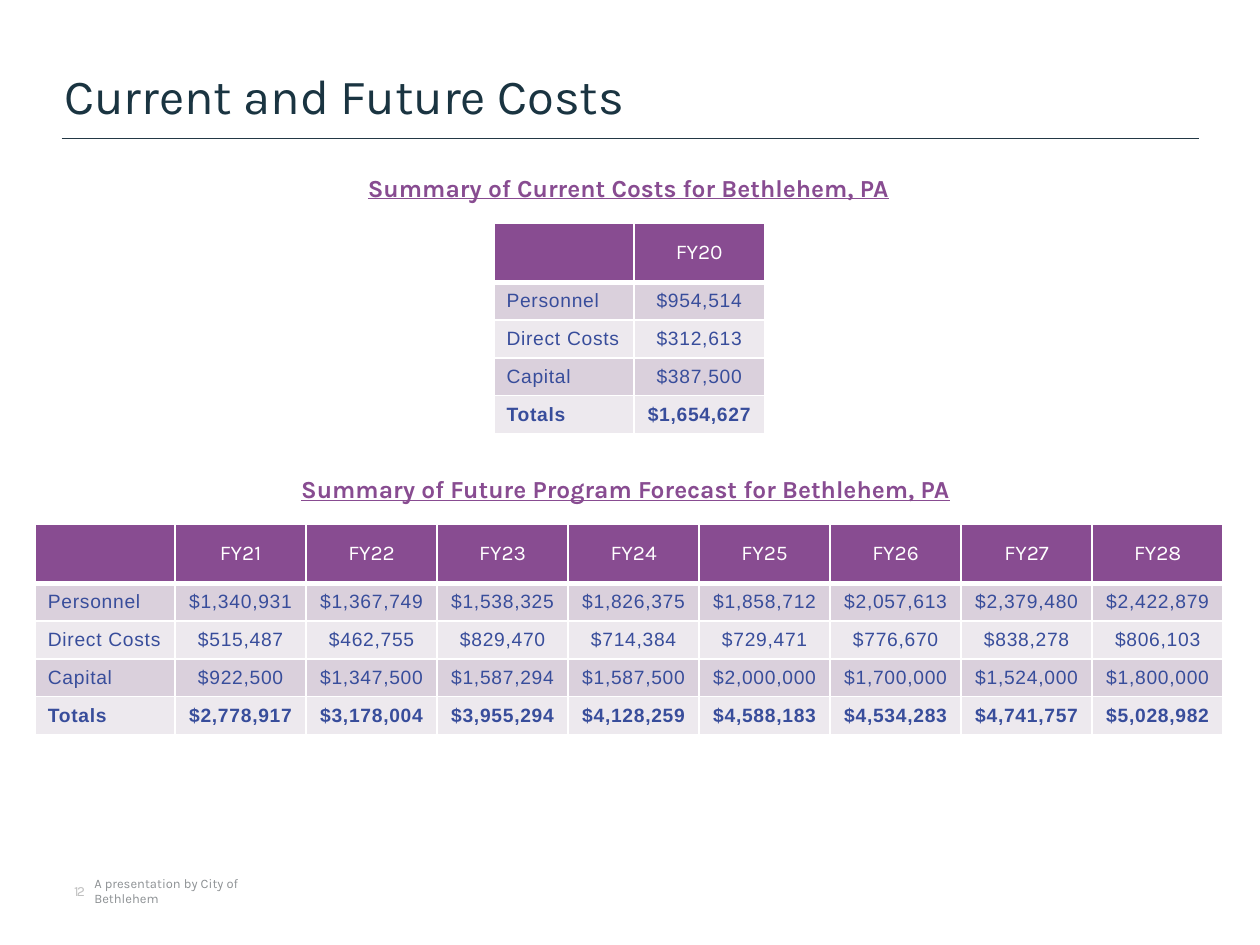
from lxml import etree
from pptx import Presentation
from pptx.dml.color import RGBColor
from pptx.enum.shapes import MSO_CONNECTOR
from pptx.enum.text import MSO_ANCHOR, PP_ALIGN
from pptx.oxml.ns import qn
from pptx.util import Inches, Pt

STRAIGHT = MSO_CONNECTOR.STRAIGHT
TOP, MIDDLE, BOTTOM = MSO_ANCHOR.TOP, MSO_ANCHOR.MIDDLE, MSO_ANCHOR.BOTTOM
LEFT, CENTER = PP_ALIGN.LEFT, PP_ALIGN.CENTER

COLORS = {
    "navy": "1A3441", "rule": "233845", "purple": "884C91", "blue": "384D9B",
    "dark band": "DAD0DC", "light band": "EDE9EE", "white": "FFFFFF",
    "footer": "8D9194", "page number": "BFBFBF",
}

CURRENT_COSTS = [
    ["", "FY20"],
    ["Personnel", "$954,514"],
    ["Direct Costs", "$312,613"],
    ["Capital", "$387,500"],
    ["Totals", "$1,654,627"],
]
FUTURE_COSTS = [
    ["", "FY21", "FY22", "FY23", "FY24", "FY25", "FY26", "FY27", "FY28"],
    ["Personnel", "$1,340,931", "$1,367,749", "$1,538,325", "$1,826,375",
     "$1,858,712", "$2,057,613", "$2,379,480", "$2,422,879"],
    ["Direct Costs", "$515,487", "$462,755", "$829,470", "$714,384",
     "$729,471", "$776,670", "$838,278", "$806,103"],
    ["Capital", "$922,500", "$1,347,500", "$1,587,294", "$1,587,500",
     "$2,000,000", "$1,700,000", "$1,524,000", "$1,800,000"],
    ["Totals", "$2,778,917", "$3,178,004", "$3,955,294", "$4,128,259",
     "$4,588,183", "$4,534,283", "$4,741,757", "$5,028,982"],
]
TABLES = [(3.92, 1.77, CURRENT_COSTS), (0.28, 4.16, FUTURE_COSTS)]
LABEL_WIDTH, YEAR_WIDTH = 1.11, 1.04
HEADER_HEIGHT, ROW_HEIGHT = 0.47, 0.3

HEADING = {"size": 14, "color": "purple", "bold": True, "underline": True}
TEXTS = [
    ("Current and Future Costs", (0.51, 0.32, 8.98, 0.67), 0, BOTTOM,
     {"size": 28, "color": "navy"}),
    ("Summary of Current Costs for Bethlehem, PA", (2.92, 1.37, 4.16, 0.4),
     0, TOP, HEADING),
    ("Summary of Future Program Forecast for Bethlehem, PA",
     (2.39, 3.76, 5.22, 0.4), 0, TOP, HEADING),
    ("A presentation by City of Bethlehem", (0.65, 6.93, 1.87, 0.28),
     0.1, MIDDLE, {"size": 7.4, "color": "footer", "after": 6}),
    ("12", (0.49, 6.93, 0.56, 0.28), 0.1, MIDDLE,
     {"size": 8, "color": "page number", "spacing": -1, "after": 6}),
]


def rgb(name):
    return RGBColor.from_string(COLORS[name])


def write(frame, text, size, color, font="Karla", bold=False, underline=False,
          align=LEFT, spacing=0, after=0):
    para = frame.paragraphs[0]
    para.alignment = align
    para.space_after = Pt(after)
    para.font.size = Pt(size)
    if not text:
        return
    span = para.add_run()
    span.text = text
    span.font.name = font
    span.font.size = Pt(size)
    span.font.bold = bold
    span.font.underline = underline
    span.font.color.rgb = rgb(color)
    if spacing:
        span.font._element.set("spc", str(round(spacing * 100)))


def add_text(slide, text, place, inset, anchor, style):
    frame = slide.shapes.add_textbox(*map(Inches, place)).text_frame
    frame.word_wrap = True
    frame.vertical_anchor = anchor
    frame.margin_left = frame.margin_right = Inches(inset)
    frame.margin_top = frame.margin_bottom = Inches(inset / 2)
    write(frame, text, **style)


def set_borders(cell, bottom):
    """Draw white cell edges, 1 pt wide except for the bottom one."""
    properties = cell._tc.get_or_add_tcPr()
    widths = {"a:lnL": 1, "a:lnR": 1, "a:lnT": 1, "a:lnB": bottom}
    for index, (tag, width) in enumerate(widths.items()):
        edge = etree.Element(qn(tag), w=str(Pt(width)))
        fill = etree.SubElement(edge, qn("a:solidFill"))
        etree.SubElement(fill, qn("a:srgbClr"), val=COLORS["white"])
        properties.insert(index, edge)


def add_cost_table(slide, left, top, rows):
    widths = [LABEL_WIDTH] + [YEAR_WIDTH] * (len(rows[0]) - 1)
    heights = [HEADER_HEIGHT] + [ROW_HEIGHT] * (len(rows) - 1)
    table = slide.shapes.add_table(
        len(rows), len(widths), Inches(left), Inches(top),
        Inches(sum(widths)), Inches(sum(heights))).table
    for column, width in zip(table.columns, widths):
        column.width = Inches(width)
    for r, (row, height) in enumerate(zip(rows, heights)):
        table.rows[r].height = Inches(height)
        if r == 0:
            band, bottom = "purple", 3
            style = {"size": 12, "color": "white"}
        else:
            band, bottom = ("dark band" if r % 2 else "light band"), 1
            style = {"size": 11, "color": "blue", "font": "Arial",
                     "spacing": 0.4, "bold": row[0] == "Totals"}
        for c, text in enumerate(row):
            cell = table.cell(r, c)
            cell.vertical_anchor = MIDDLE
            cell.fill.solid()
            cell.fill.fore_color.rgb = rgb(band)
            set_borders(cell, bottom)
            write(cell.text_frame, text, align=CENTER if c else LEFT, **style)


def main():
    deck = Presentation()
    deck.slide_width, deck.slide_height = Inches(10), Inches(7.5)
    slide = deck.slides.add_slide(deck.slide_layouts[6])

    rule = slide.shapes.add_connector(
        STRAIGHT, Inches(0.49), Inches(1.1), Inches(9.52), Inches(1.1))
    rule.line.color.rgb = rgb("rule")
    rule.line.width = Pt(0.5)
    etree.SubElement(rule._element.spPr, qn("a:effectLst"))

    for text in TEXTS:
        add_text(slide, *text)
    for table in TABLES:
        add_cost_table(slide, *table)
    deck.save("out.pptx")


if __name__ == "__main__":
    main()
